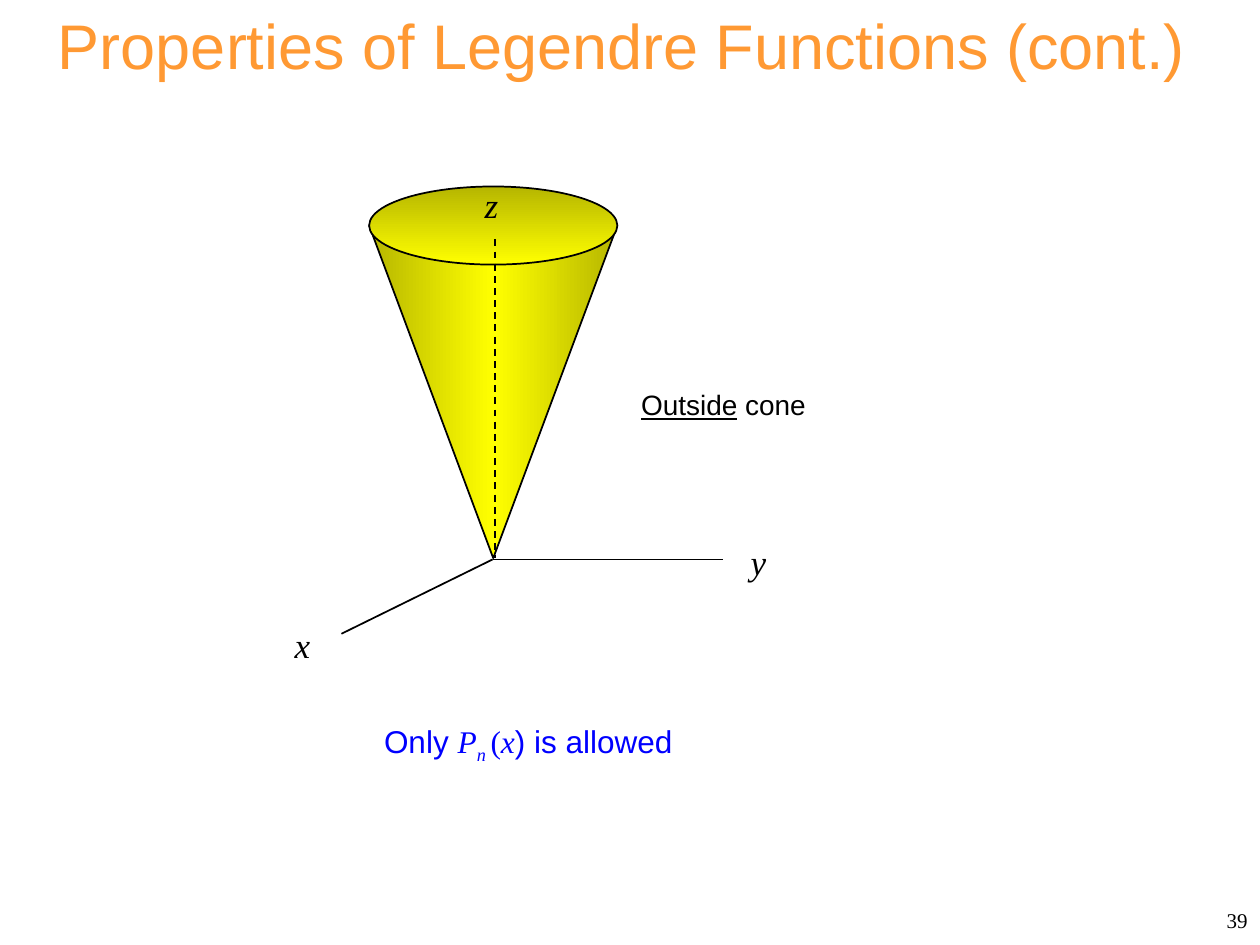
from dataclasses import dataclass

import lxml.etree
import pptx
import pptx.dml.color
import pptx.enum.dml
import pptx.enum.shapes
import pptx.enum.text
import pptx.oxml.ns
import pptx.util
from pptx.util import Inches

Align = pptx.enum.text.PP_ALIGN
Anchor = pptx.enum.text.MSO_ANCHOR
ShapeType = pptx.enum.shapes.MSO_SHAPE
qn = pptx.oxml.ns.qn


@dataclass(frozen=True)
class Theme:
    sans: str = "Arial"
    serif: str = "Times New Roman"
    orange: str = "FF9933"
    blue: str = "0000FF"
    black: str = "000000"
    white: str = "FFFFFF"
    yellow: str = "FFFF00"
    cone_shade: int = 46275  # darkens yellow at the cone's edges
    title_size: int = 36
    axis_size: int = 20
    formula_size: int = 18
    caption_size: int = 16
    number_size: int = 12
    line_width: float = 1


THEME = Theme()


@dataclass(frozen=True)
class Box:
    left: float
    top: float
    width: float
    height: float

    def lengths(self) -> tuple:
        return tuple(Inches(n) for n in (self.left, self.top, self.width, self.height))


@dataclass(frozen=True)
class Piece:
    text: str
    font: str = THEME.sans
    italic: bool = False
    underline: bool = False
    baseline: int = 0


@dataclass(frozen=True)
class Label:
    box: Box
    pieces: tuple
    size: int
    color: str = THEME.black
    align: Align = Align.LEFT
    anchor: Anchor = Anchor.TOP
    wrap: bool = True


@dataclass(frozen=True)
class Segment:
    start: tuple
    end: tuple
    dashed: bool = False


def rgb(color: str) -> pptx.dml.color.RGBColor:
    return pptx.dml.color.RGBColor.from_string(color)


def write_label(shape, label: Label) -> None:
    shape.left, shape.top, shape.width, shape.height = label.box.lengths()
    frame = shape.text_frame
    frame.word_wrap = label.wrap
    frame.vertical_anchor = label.anchor
    paragraph = frame.paragraphs[0]
    paragraph.alignment = label.align
    for piece in label.pieces:
        run = paragraph.add_run()
        run.text = piece.text
        font = run.font
        font.name = piece.font
        font.size = pptx.util.Pt(label.size)
        font.color.rgb = rgb(label.color)
        font.italic = piece.italic
        font.underline = piece.underline
        if piece.baseline:
            font._element.set("baseline", str(piece.baseline))


def add_label(slide, label: Label):
    shape = slide.shapes.add_textbox(*label.box.lengths())
    write_label(shape, label)
    return shape


def style_line(line) -> None:
    line.color.rgb = rgb(THEME.black)
    line.width = pptx.util.Pt(THEME.line_width)


def add_cone_part(slide, kind: ShapeType, box: Box, angle: int, shaded_stops: dict):
    """Add an outlined shape; shaded_stops maps each percentage to dark or light."""
    shape = slide.shapes.add_shape(kind, *box.lengths())
    shape.shadow.inherit = False
    style_line(shape.line)
    shape.fill.gradient()
    shape.fill.gradient_angle = angle
    stops = shape._element.spPr.find(qn("a:gradFill")).find(qn("a:gsLst"))
    for stop in list(stops):
        stops.remove(stop)
    for percent, shaded in shaded_stops.items():
        stop = lxml.etree.SubElement(stops, qn("a:gs"), pos=str(percent * 1000))
        color = lxml.etree.SubElement(stop, qn("a:srgbClr"), val=THEME.yellow)
        if shaded:
            lxml.etree.SubElement(color, qn("a:shade"), val=str(THEME.cone_shade))
    return shape


def add_segment(slide, segment: Segment) -> None:
    connector = slide.shapes.add_connector(
        pptx.enum.shapes.MSO_CONNECTOR.STRAIGHT,
        *(Inches(n) for n in segment.start + segment.end))
    style_line(connector.line)
    if segment.dashed:
        connector.line.dash_style = pptx.enum.dml.MSO_LINE.DASH
    lxml.etree.SubElement(connector._element.spPr, qn("a:effectLst"))


def main() -> None:
    presentation = pptx.Presentation()
    presentation.slide_width = Inches(10)
    presentation.slide_height = Inches(7.5)
    slide = presentation.slides.add_slide(presentation.slide_layouts[5])

    # Title and slide number
    write_label(slide.shapes.title, Label(
        Box(0.27, 0, 9.33, 0.7), (Piece("Properties of Legendre Functions (cont.)"),),
        THEME.title_size, THEME.orange, Align.CENTER))
    add_label(slide, Label(
        Box(7.67, 7.1, 2.33, 0.4), (Piece("39", THEME.serif),),
        THEME.number_size, align=Align.RIGHT, anchor=Anchor.MIDDLE))

    # Cone: inverted triangle under an elliptical rim
    side = add_cone_part(slide, ShapeType.ISOSCELES_TRIANGLE,
                         Box(2.93, 1.79, 1.97, 2.64), 0, {0: True, 50: False, 100: True})
    side._element.spPr.find(qn("a:xfrm")).set("flipV", "1")
    add_cone_part(slide, ShapeType.OVAL,
                  Box(2.93, 1.48, 1.97, 0.62), 270, {0: True, 100: False})

    # Axes
    origin = (3.91, 4.44)
    for segment in (Segment((3.93, 1.9), (3.93, 4.43), dashed=True),
                    Segment(origin, (5.74, 4.44)),
                    Segment(origin, (2.71, 5.03))):
        add_segment(slide, segment)
    for name, box, align in (("y", Box(5.86, 4.24, 0.61, 0.43), Align.LEFT),
                             ("x", Box(2.24, 4.9, 0.37, 0.43), Align.LEFT),
                             ("z ", Box(3.71, 1.41, 0.45, 0.43), Align.CENTER)):
        add_label(slide, Label(box, (Piece(name, THEME.serif, italic=True),),
                               THEME.axis_size, align=align))

    # Region caption and allowed solution
    caption = add_label(slide, Label(
        Box(4.99, 3.03, 1.52, 0.37), (Piece("Outside", underline=True), Piece(" cone")),
        THEME.caption_size, wrap=False))
    caption.fill.solid()
    caption.fill.fore_color.rgb = rgb(THEME.white)
    formula = (
        Piece("Only "),
        Piece("P", THEME.serif, italic=True),
        Piece("n ", THEME.serif, italic=True, baseline=-25000),
        Piece("(", THEME.serif),
        Piece("x", THEME.serif, italic=True),
        Piece(") is allowed"),
    )
    add_label(slide, Label(Box(2.95, 5.68, 2.53, 0.4), formula,
                           THEME.formula_size, THEME.blue, wrap=False))

    presentation.save("out.pptx")


if __name__ == "__main__":
    main()
